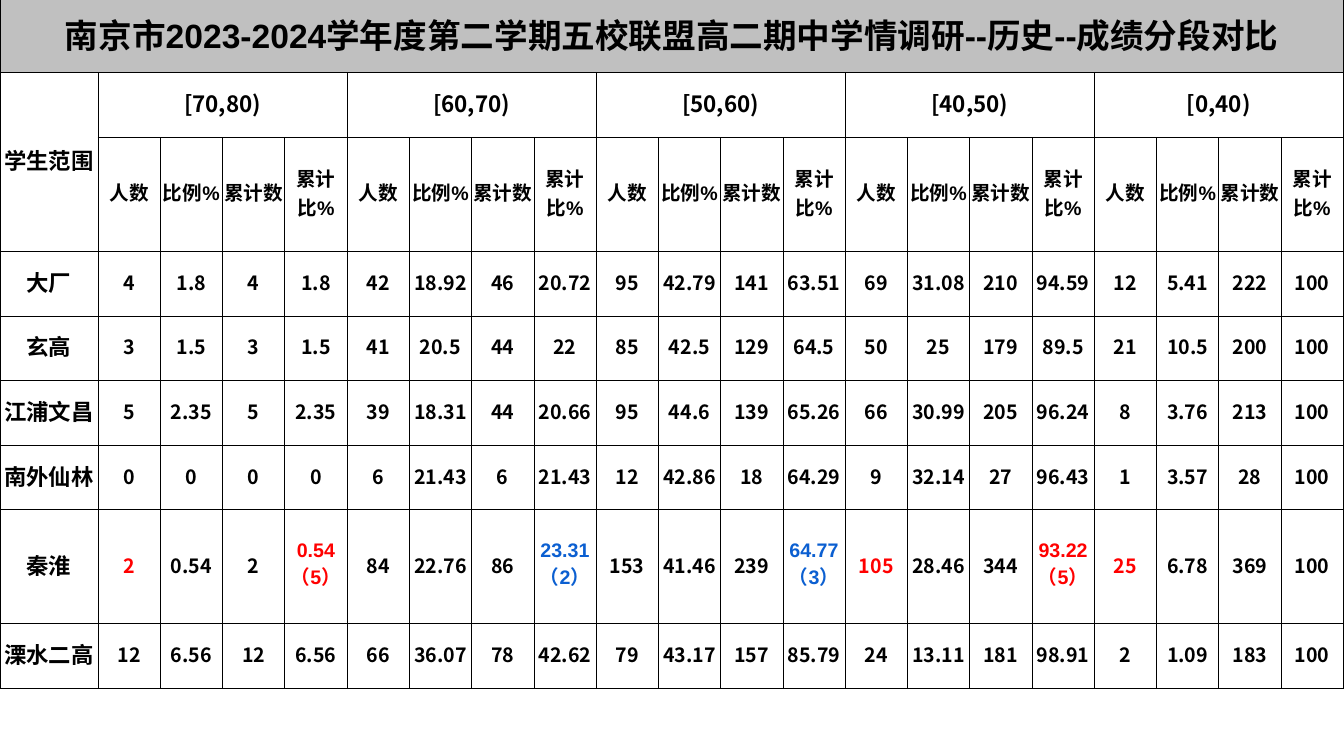
"""Build a slide with a table of history score bands by school."""
from lxml.etree import SubElement
from pptx import Presentation
from pptx.dml.color import RGBColor
from pptx.enum.text import MSO_ANCHOR, PP_ALIGN
from pptx.oxml.ns import qn
from pptx.util import Pt

TITLE = "南京市2023-2024学年度第二学期五校联盟高二期中学情调研--历史--成绩分段对比"
CORNER = "学生范围"
BANDS = ["[70,80)", "[60,70)", "[50,60)", "[40,50)", "[0,40)"]
MEASURES = ["人数", "比例%", "累计数", "累计比%"]
SCHOOLS = [
    ("大厂", "4 1.8 4 1.8 42 18.92 46 20.72 95 42.79 141 63.51 69 31.08 210 94.59 12 5.41 222 100"),
    ("玄高", "3 1.5 3 1.5 41 20.5 44 22 85 42.5 129 64.5 50 25 179 89.5 21 10.5 200 100"),
    ("江浦文昌", "5 2.35 5 2.35 39 18.31 44 20.66 95 44.6 139 65.26 66 30.99 205 96.24 8 3.76 213 100"),
    ("南外仙林", "0 0 0 0 6 21.43 6 21.43 12 42.86 18 64.29 9 32.14 27 96.43 1 3.57 28 100"),
    ("秦淮", "2 0.54 2 0.54（5） 84 22.76 86 23.31（2） 153 41.46 239 64.77（3） "
             "105 28.46 344 93.22（5） 25 6.78 369 100"),
    ("溧水二高", "12 6.56 12 6.56 66 36.07 78 42.62 79 43.17 157 85.79 24 13.11 181 98.91 2 1.09 183 100"),
]
BLACK, GREY, RED, BLUE = "000000", "C0C0C0", "FF0000", "0B5FD1"
HIGHLIGHTS = {("秦淮", 1): RED, ("秦淮", 4): RED, ("秦淮", 8): BLUE, ("秦淮", 12): BLUE,
              ("秦淮", 13): RED, ("秦淮", 16): RED, ("秦淮", 17): RED}
LATIN, CJK = "Arial", "Noto Sans CJK SC"
SLIDE_W, SLIDE_H = 960, 540
NAME_W = 70
ROW_HEIGHTS = [52.6, 46.4, 81.2, 46.2, 46.2, 46.2, 46.2, 81.2, 46.2]
HEADER_ROWS = 3


def color(hex_value):
    return RGBColor.from_string(hex_value)


def add_borders(cell):
    tc_pr = cell._tc.get_or_add_tcPr()
    for side in ("a:lnL", "a:lnR", "a:lnT", "a:lnB"):
        ln = SubElement(tc_pr, qn(side), w=str(Pt(0.5)))
        fill = SubElement(ln, qn("a:solidFill"))
        SubElement(fill, qn("a:srgbClr"), val=BLACK)


def write(cell, text, size, font=LATIN, ink=BLACK):
    cell.text_frame.text = text
    p = cell.text_frame.paragraphs[0]
    p.alignment = PP_ALIGN.CENTER
    r = p.runs[0]
    r.font.size, r.font.bold, r.font.name = Pt(size), True, font
    r.font.color.rgb = color(ink)
    SubElement(r._r.get_or_add_rPr(), qn("a:ea"), typeface=CJK)


def main():
    prs = Presentation()
    prs.slide_width, prs.slide_height = Pt(SLIDE_W), Pt(SLIDE_H)
    s = prs.slides.add_slide(prs.slide_layouts[6])

    value_count = len(BANDS) * len(MEASURES)
    table = s.shapes.add_table(len(ROW_HEIGHTS), value_count + 1, Pt(0), Pt(-0.72),
                               Pt(SLIDE_W), Pt(sum(ROW_HEIGHTS))).table
    for row, height in zip(table.rows, ROW_HEIGHTS):
        row.height = Pt(height)
    for i, column in enumerate(table.columns):
        column.width = Pt((SLIDE_W - NAME_W) / value_count if i else NAME_W)

    for cell in table.iter_cells():
        cell.margin_left = cell.margin_right = cell.margin_top = Pt(0.72)
        cell.margin_bottom = Pt(3.6)
        cell.vertical_anchor = MSO_ANCHOR.MIDDLE
        add_borders(cell)
        cell.fill.background()

    title = table.cell(0, 0)
    title.merge(table.cell(0, value_count))
    title.fill.solid()
    title.fill.fore_color.rgb = color(GREY)
    write(title, TITLE, 24)

    corner = table.cell(1, 0)
    corner.merge(table.cell(2, 0))
    write(corner, CORNER, 16)

    for b, band in enumerate(BANDS):
        first = 1 + b * len(MEASURES)
        head = table.cell(1, first)
        head.merge(table.cell(1, first + len(MEASURES) - 1))
        write(head, band, 16, CJK)
        for m, measure in enumerate(MEASURES):
            write(table.cell(2, first + m), measure, 14)

    for row, (school, values) in enumerate(SCHOOLS, HEADER_ROWS):
        write(table.cell(row, 0), school, 16)
        for col, value in enumerate(values.split(), 1):
            font = LATIN if "（" in value else CJK
            write(table.cell(row, col), value, 14, font, HIGHLIGHTS.get((school, col), BLACK))

    prs.save("out.pptx")


if __name__ == "__main__":
    main()
